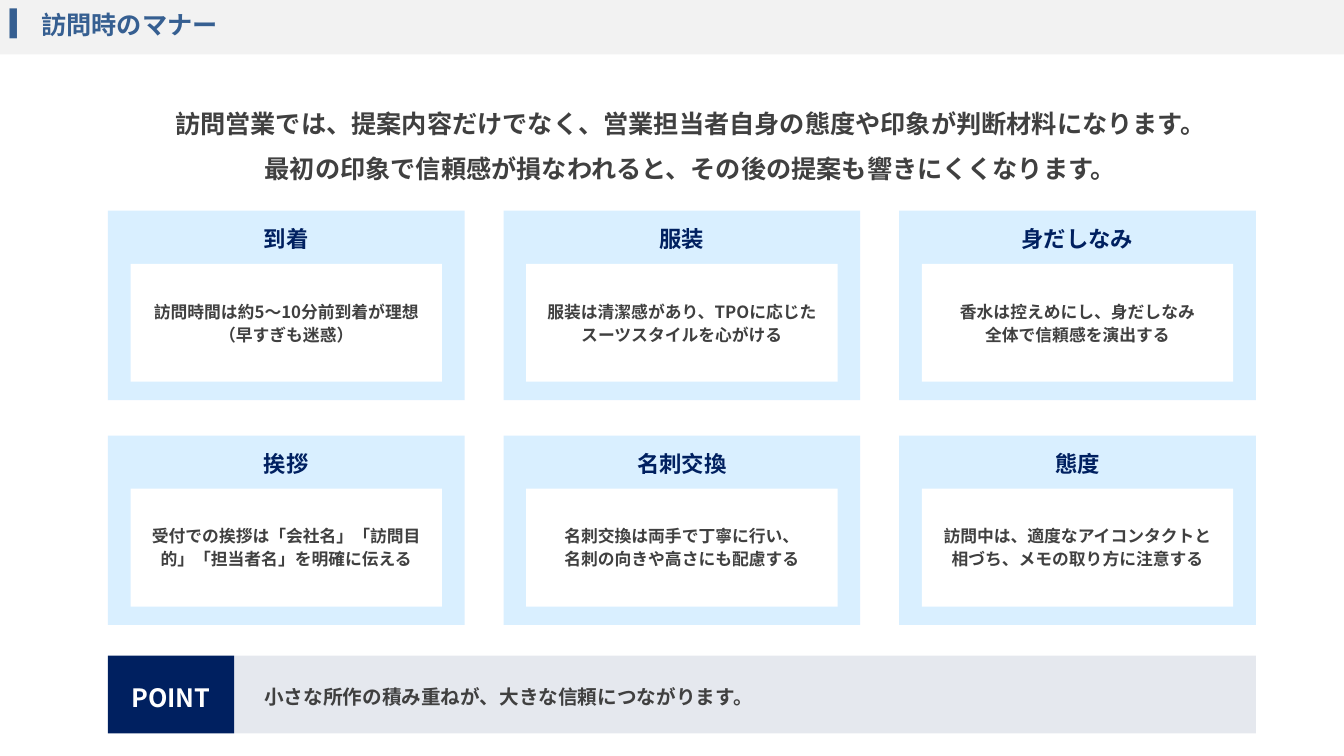
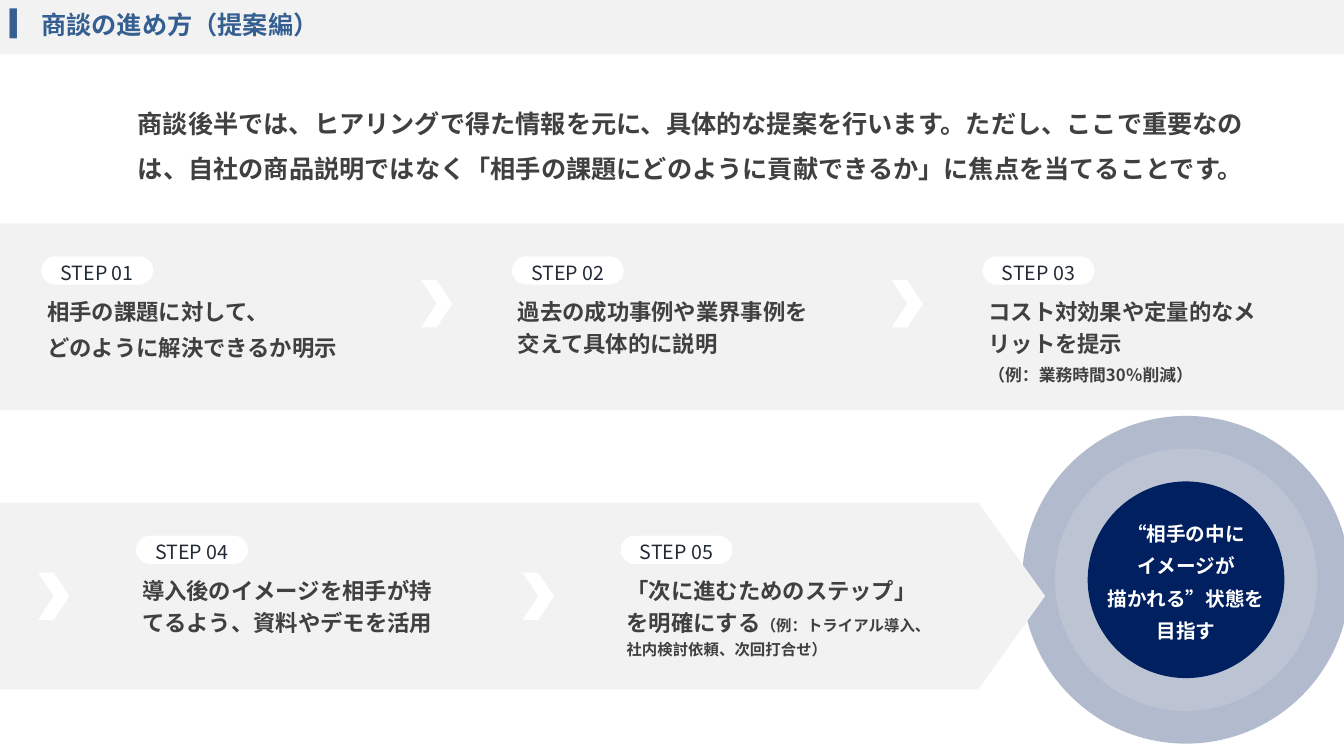
from dataclasses import dataclass

from lxml import etree
from pptx import Presentation
from pptx import util as u
from pptx.dml import color
from pptx.enum import shapes, text
from pptx.oxml import ns

Cm, Pt = u.Cm, u.Pt
KIND = shapes.MSO_SHAPE
LEFT, CENTER = text.PP_ALIGN.LEFT, text.PP_ALIGN.CENTER
TOP, MIDDLE = text.MSO_ANCHOR.TOP, text.MSO_ANCHOR.MIDDLE

FONT = "Noto Sans CJK JP"
TITLE_FONT = "Arial"
NAVY, SKY, GREY, WHITE = "002060", "D9EFFF", "F2F2F2", "FFFFFF"
INK, STEP_INK, TITLE_BLUE, PALE = "404040", "222A35", "365F91", "D6DCE5"
WIDTH, HEIGHT = 33.87, 19.05
INSETS = (0.25, 0.13, 0.25, 0.13)


@dataclass
class Box:
    left: float
    top: float
    width: float
    height: float

    def inside(self, dx, dy, width, height):
        return Box(self.left + dx, self.top + dy, width, height)

    def lengths(self):
        return [Cm(n) for n in (self.left, self.top, self.width, self.height)]


def rgb(hex_string):
    return color.RGBColor.from_string(hex_string)


def add_block(slide, box, fill, kind=KIND.RECTANGLE, opacity=None, adjust=None):
    """Add a borderless filled shape; opacity is a percentage."""
    shape = slide.shapes.add_shape(kind, *box.lengths())
    shape.shadow.inherit = False
    shape.line.fill.background()
    shape.fill.solid()
    shape.fill.fore_color.rgb = rgb(fill)
    if opacity is not None:
        tint = shape._element.spPr.find(".//" + ns.qn("a:srgbClr"))
        etree.SubElement(tint, ns.qn("a:alpha"), val=str(opacity * 1000))
    if adjust is not None:
        shape.adjustments[0] = adjust
    return shape


def style_run(run, size, ink, bold, font):
    run.font.name, run.font.size, run.font.bold = font, Pt(size), bold
    run.font.color.rgb = rgb(ink)
    east_asian = etree.SubElement(run.font._element, ns.qn("a:ea"))
    east_asian.set("typeface", FONT)


def write(shape, lines, size, ink=INK, bold=True, font=FONT, align=CENTER,
          anchor=MIDDLE, insets=INSETS, spacing=None, before=None, after=None,
          wrap=True):
    """Write one paragraph per line; a line is a string or (text, size) pairs."""
    frame = shape.text_frame
    frame.word_wrap = wrap
    frame.vertical_anchor = anchor
    (frame.margin_left, frame.margin_top,
     frame.margin_right, frame.margin_bottom) = [Cm(n) for n in insets]
    for index, line in enumerate(lines):
        paragraph = frame.add_paragraph() if index else frame.paragraphs[0]
        paragraph.alignment = align
        if spacing:
            paragraph.line_spacing = spacing
        if before:
            paragraph.space_before = Pt(before)
        if after:
            paragraph.space_after = Pt(after)
        parts = [(line, size)] if isinstance(line, str) else line
        paragraph.text = parts[0][0]
        for words, _ in parts[1:]:
            paragraph.add_run().text = words
        for run, (_, run_size) in zip(paragraph.runs, parts):
            style_run(run, run_size, ink, bold, font)


def add_title_band(slide, title):
    band = add_block(slide, Box(0, -0.15, WIDTH, 1.52), GREY)
    write(band, [title], 18, TITLE_BLUE, font=TITLE_FONT, align=LEFT)
    properties = band.text_frame.paragraphs[0]._p.get_or_add_pPr()
    indent = Cm(0.79)
    properties.set("marL", str(indent))
    properties.set("indent", str(-indent))
    etree.SubElement(properties, ns.qn("a:buFont"), typeface=TITLE_FONT)
    etree.SubElement(properties, ns.qn("a:buChar"), char="▍")


def add_lead(slide, lines):
    lead = add_block(slide, Box(3.15, 2.34, 28.5, 2.54), WHITE)
    write(lead, lines, 18, spacing=1.2, after=6)


def start_slide(presentation, title, lead):
    slide = presentation.slides.add_slide(presentation.slide_layouts[6])
    add_title_band(slide, title)
    add_lead(slide, lead)
    return slide


def add_card(slide, box, heading, lines, font=FONT):
    card = add_block(slide, box, SKY)
    write(card, [heading], 16, NAVY, anchor=TOP, before=2,
          insets=(0.2, 0.36, 0.2, 0))
    side = 0.57
    panel = add_block(
        slide, box.inside(side, 1.34, box.width - 2 * side, 2.97), WHITE)
    write(panel, lines, 12, font=font, before=2, insets=(0.51, 0.13, 0.51, 0.13))


def add_card_grid(slide, box, cards, columns=3, gap_x=0.98, gap_y=0.89):
    rows = -(-len(cards) // columns)
    width = (box.width - gap_x * (columns - 1)) / columns
    height = (box.height - gap_y * (rows - 1)) / rows
    for index, card in enumerate(cards):
        row, column = divmod(index, columns)
        place = box.inside(column * (width + gap_x), row * (height + gap_y),
                           width, height)
        add_card(slide, place, *card)


def add_point(slide, box, message):
    label_width = 3.18
    strip = add_block(
        slide, box.inside(label_width, 0, box.width - label_width, box.height),
        NAVY, opacity=10)
    write(strip, [message], 14, align=LEFT, spacing=1.2,
          insets=(0.76, 0.13, 0.25, 0.13))
    label = add_block(slide, box.inside(0, 0, label_width, box.height), NAVY)
    write(label, ["POINT"], 18, WHITE, spacing=1.2)


def add_step(slide, left, top, number, lines):
    pill_box = Box(left, top, 2.82, 0.71)
    pill = add_block(slide, pill_box, WHITE, KIND.ROUNDED_RECTANGLE, adjust=0.5)
    write(pill, [f"STEP {number:02d}"], 14, STEP_INK, bold=False, spacing=1.2,
          after=3)
    body = slide.shapes.add_textbox(
        *pill_box.inside(-0.1, 0.71, 8.28, 2.03).lengths())
    write(body, lines, 16, align=LEFT, anchor=TOP, spacing=1.2, after=3,
          insets=(0.25, 0.2, 0.25, 0.2))
    body.text_frame.auto_size = text.MSO_AUTO_SIZE.SHAPE_TO_FIT_TEXT


def add_step_row(slide, box, steps, first, start, pitch, chevron_gap,
                 chevron_drop, kind=KIND.RECTANGLE, adjust=None):
    """Draw a band of steps; every step but STEP 01 follows a chevron."""
    add_block(slide, box, GREY, kind, adjust=adjust)
    for index, lines in enumerate(steps):
        offset = start + index * pitch
        number = first + index
        add_step(slide, box.left + offset, box.top + 0.83, number, lines)
        if number > 1:
            add_block(slide, box.inside(offset - chevron_gap, chevron_drop,
                                        0.79, 1.19), WHITE, KIND.CHEVRON)


def add_target(slide, box, lines):
    ring = box.width / 10
    rings = [(NAVY, 30), (PALE, 30), (NAVY, None)]
    for index, (fill, opacity) in enumerate(rings):
        inset = index * ring
        size = box.width - 2 * inset
        disc = add_block(slide, box.inside(inset, inset, size, size), fill,
                         KIND.OVAL, opacity)
    write(disc, lines, 14, WHITE, spacing=1.2, after=3, wrap=False)


def build_manners(presentation):
    slide = start_slide(presentation, "訪問時のマナー", [
        "訪問営業では、提案内容だけでなく、営業担当者自身の態度や印象が判断材料になります。",
        "最初の印象で信頼感が損なわれると、その後の提案も響きにくくなります。"])
    add_card_grid(slide, Box(2.72, 5.31, 28.93, 10.44), [
        ("到着", ["訪問時間は約5〜10分前到着が理想", "（早すぎも迷惑）"]),
        ("服装", ["服装は清潔感があり、TPOに応じた", "スーツスタイルを心がける"]),
        ("身だしなみ", ["香水は控えめにし、身だしなみ", "全体で信頼感を演出する"]),
        ("挨拶", ["受付での挨拶は「会社名」「訪問目", "的」「担当者名」を明確に伝える"]),
        ("名刺交換", ["名刺交換は両手で丁寧に行い、", "名刺の向きや高さにも配慮する"]),
        ("態度", ["訪問中は、適度なアイコンタクトと", "相づち、メモの取り方に注意する"],
         "Quicksand"),
    ])
    add_point(slide, Box(2.72, 16.52, 28.93, 1.96),
              "小さな所作の積み重ねが、大きな信頼につながります。")


def build_proposal(presentation):
    slide = start_slide(presentation, "商談の進め方（提案編）", [
        "商談後半では、ヒアリングで得た情報を元に、具体的な提案を行います。ただし、ここで重要なの",
        "は、自社の商品説明ではなく「相手の課題にどのように貢献できるか」に焦点を当てることです。"])
    add_target(slide, Box(25.76, 10.48, 8.26, 8.26),
               ["“相手の中に", "イメージが", "描かれる”状態を", "目指す"])
    add_step_row(slide, Box(0, 5.63, WIDTH, 4.7), [
        ["相手の課題に対して、", "どのように解決できるか明示"],
        ["過去の成功事例や業界事例を交えて具体的に説明"],
        ["コスト対効果や定量的なメリットを提示",
         [("（例：業務時間30％削減）", 12)]],
    ], first=1, start=1.04, pitch=11.86, chevron_gap=2.29, chevron_drop=1.43)
    add_step_row(slide, Box(0, 12.67, 26.34, 4.7), [
        ["導入後のイメージを相手が持てるよう、資料やデモを活用"],
        [[("「次に進むためのステップ」を明確にする", 16),
          ("（例：トライアル導入、社内検討依頼、次回打合せ）", 11)]],
    ], first=4, start=3.43, pitch=12.21, chevron_gap=2.47, chevron_drop=1.76,
        kind=KIND.PENTAGON, adjust=0.36)


def main():
    presentation = Presentation()
    presentation.slide_width, presentation.slide_height = Cm(WIDTH), Cm(HEIGHT)
    build_manners(presentation)
    build_proposal(presentation)
    presentation.save("out.pptx")


if __name__ == "__main__":
    main()
